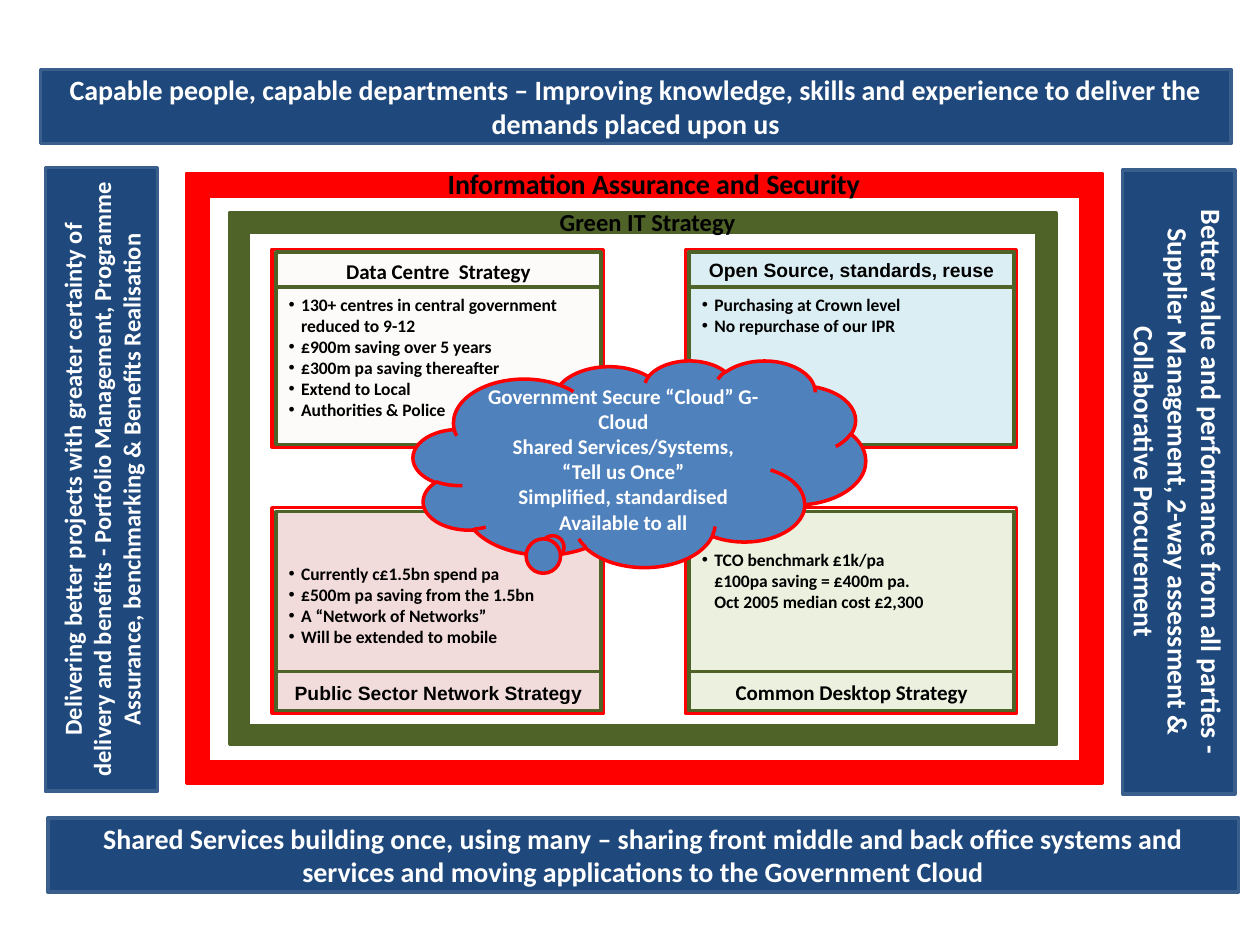
"""Build a one-slide overview of a government IT strategy."""
from lxml import etree
from pptx import Presentation
from pptx.dml.color import RGBColor
from pptx.enum.shapes import MSO_SHAPE
from pptx.enum.text import MSO_ANCHOR, MSO_AUTO_SIZE, PP_ALIGN
from pptx.oxml.ns import qn
from pptx.util import Inches, Pt

RECT, FRAME, CLOUD = MSO_SHAPE.RECTANGLE, MSO_SHAPE.FRAME, MSO_SHAPE.CLOUD_CALLOUT
TOP, MIDDLE, BOTTOM = MSO_ANCHOR.TOP, MSO_ANCHOR.MIDDLE, MSO_ANCHOR.BOTTOM
LEFT, CENTER = PP_ALIGN.LEFT, PP_ALIGN.CENTER
NO_AUTOFIT = MSO_AUTO_SIZE.NONE

COLORS = {
    "white": "FFFFFF", "black": "000000", "navy": "1F497D", "navy_edge": "3A5F8C",
    "red": "FF0000", "green": "4F6228", "cloud": "4F81BD", "cream": "FCFBF9",
    "pink": "F2DCDB", "aqua": "DBEEF4", "lime": "EBF1DE",
}
BARS = [
    ("Capable people, capable departments – Improving knowledge, skills and experience "
     "to deliver the demands placed upon us", (0.32, 0.55, 9.45, 0.59), "horz", 16),
    ("Shared Services building once, using many – sharing front middle and back office "
     "systems and services and moving applications to the Government Cloud",
     (0.38, 6.49, 9.45, 0.59), "horz", 16),
    ("Better value and performance from all parties - Supplier Management, 2-way "
     "assessment & Collaborative Procurement", (8.91, 1.35, 0.89, 4.95), "vert", 16),
    ("Delivering better projects with greater certainty of delivery and benefits - "
     "Portfolio Management, Programme Assurance, benchmarking & Benefits Realisation",
     (0.36, 1.33, 0.89, 4.95), "vert270", 14),
]
FRAMES = [("red", (1.48, 1.38, 7.27, 4.84)), ("green", (1.82, 1.69, 6.56, 4.22))]
ASSURANCE = ("Information Assurance and Security", (3.43, 1.27, 3.52, 0.37), 16)
GREEN_IT = ("Green IT Strategy", (4.34, 1.59, 1.6, 0.34), 14)
STRATEGIES = [
    {"name": "Data Centre  Strategy", "font": "Calibri", "size": 12, "fill": "cream",
     "column": 0, "row": 0, "list_top": 2.28, "list_height": 1.11, "bulleted": 5,
     "points": ["130+ centres in central government reduced to 9-12",
                "£900m saving over 5 years", "£300m pa saving thereafter",
                "Extend to Local", "Authorities & Police"]},
    {"name": "Public Sector Network Strategy", "font": "Arial", "size": 11, "fill": "pink",
     "column": 0, "row": 1, "list_top": 4.42, "list_height": 0.77, "bulleted": 4,
     "points": ["Currently c£1.5bn spend pa", "£500m pa saving from the 1.5bn",
                "A “Network of Networks”", "Will be extended to mobile"]},
    {"name": "Open Source, standards, reuse", "font": "Arial", "size": 11, "fill": "aqua",
     "column": 1, "row": 0, "list_top": 2.28, "list_height": 0.44, "bulleted": 2,
     "points": ["Purchasing at Crown level", "No repurchase of our IPR"]},
    {"name": "Common Desktop Strategy", "font": "Calibri", "size": 12, "fill": "lime",
     "column": 1, "row": 1, "list_top": 4.31, "list_height": 0.86, "bulleted": 1,
     "points": ["TCO benchmark £1k/pa", "£100pa saving = £400m pa.",
                "Oct 2005 median cost £2,300"]},
]
CLOUD_LINES = ["Government Secure “Cloud” G-Cloud", "Shared Services/Systems,",
               "“Tell us Once”", "Simplified, standardised", "Available to all"]
CLOUD_BOX = (3.28, 2.86, 3.59, 1.64)
COLUMN_LEFT, COLUMN_STEP, PANEL_WIDTH, RIM = 2.16, 3.28, 2.63, 0.03
ROWS = [
    {"outline": (1.98, 1.57), "body": (2.21, 1.32), "header": (2.0, 0.28), "anchor": TOP},
    {"outline": (4.03, 1.63), "body": (4.06, 1.57), "header": (5.33, 0.31), "anchor": BOTTOM},
]


def color(name):
    return RGBColor.from_string(COLORS[name])


def apply(target, formats):
    for attribute, value in formats.items():
        setattr(target, attribute, value)


def place(shape, box):
    apply(shape, dict(zip(("left", "top", "width", "height"), map(Inches, box))))


def write(shape, lines, size, ink, font="Calibri", align=CENTER, anchor=MIDDLE, wrap=True):
    frame = shape.text_frame
    frame.text = "\n".join(lines)
    apply(frame, {"word_wrap": wrap, "vertical_anchor": anchor, "auto_size": NO_AUTOFIT})
    for paragraph in frame.paragraphs:
        apply(paragraph, {"alignment": align, "space_before": Pt(0), "line_spacing": 1.0})
        letters = paragraph.runs[0].font
        apply(letters, {"name": font, "size": Pt(size), "bold": True})
        letters.color.rgb = color(ink)


def draw(slide, kind, box, fill, edge, adjustments=()):
    shape = slide.shapes.add_shape(kind, *map(Inches, box))
    shape.shadow.inherit = False
    if fill:
        shape.fill.solid()
        shape.fill.fore_color.rgb = color(fill)
    else:
        shape.fill.background()
    shape.line.color.rgb = color(edge)
    shape.line.width = Pt(2)
    for index, value in enumerate(adjustments):
        shape.adjustments[index] = value
    return shape


def bring_forward(shape):
    shape.element.getparent().append(shape.element)


def add_bullets(placeholder, bulleted):
    for index, paragraph in enumerate(placeholder.text_frame.paragraphs):
        has_bullet = index < bulleted
        properties = paragraph._p.get_or_add_pPr()
        properties.set("marL", str(Inches(0.1)))
        properties.set("indent", str(Inches(-0.1 if has_bullet else 0)))
        if has_bullet:
            etree.SubElement(properties, qn("a:buFont")).set("typeface", "Arial")
            etree.SubElement(properties, qn("a:buChar")).set("char", "•")
        else:
            etree.SubElement(properties, qn("a:buNone"))


def add_strategy(slide, strategy, points):
    row = ROWS[strategy["row"]]
    left = COLUMN_LEFT + strategy["column"] * COLUMN_STEP
    inner_left, inner_width = left + RIM, PANEL_WIDTH - 2 * RIM + 0.01

    def inner(top, height):
        return inner_left, top, inner_width, height

    top, height = row["outline"]
    draw(slide, RECT, (left, top, PANEL_WIDTH, height), None, "red")
    draw(slide, RECT, inner(*row["body"]), strategy["fill"], "green")
    header = draw(slide, RECT, inner(*row["header"]), strategy["fill"], "green")
    write(header, [strategy["name"]], strategy["size"], "black", strategy["font"],
          anchor=row["anchor"])
    place(points, inner(strategy["list_top"], strategy["list_height"]))
    write(points, strategy["points"], 10, "black", align=LEFT, anchor=TOP)
    add_bullets(points, strategy["bulleted"])
    bring_forward(points)


def main():
    deck = Presentation()
    apply(deck, {"slide_width": Inches(10), "slide_height": Inches(7.5)})
    slide = deck.slides.add_slide(deck.slide_layouts.get_by_name("Comparison"))
    title, *point_lists = list(slide.placeholders)

    for words, box, direction, size in BARS:
        bar = draw(slide, RECT, box, "navy", "navy_edge")
        write(bar, [words], size, "white")
        bar.text_frame._txBody.bodyPr.set("vert", direction)
    for tint, box in FRAMES:
        draw(slide, FRAME, box, tint, tint, [0.036])

    green_it = slide.shapes.add_textbox(0, 0, 0, 0)
    for label, (words, box, size) in ((title, ASSURANCE), (green_it, GREEN_IT)):
        place(label, box)
        write(label, [words], size, "black", anchor=TOP, wrap=False)
        bring_forward(label)

    for strategy, points in zip(STRATEGIES, point_lists):
        add_strategy(slide, strategy, points)
    cloud = draw(slide, CLOUD, CLOUD_BOX, "cloud", "red", [-0.19, 0.4])
    write(cloud, CLOUD_LINES, 12, "white")
    deck.save("out.pptx")


if __name__ == "__main__":
    main()
